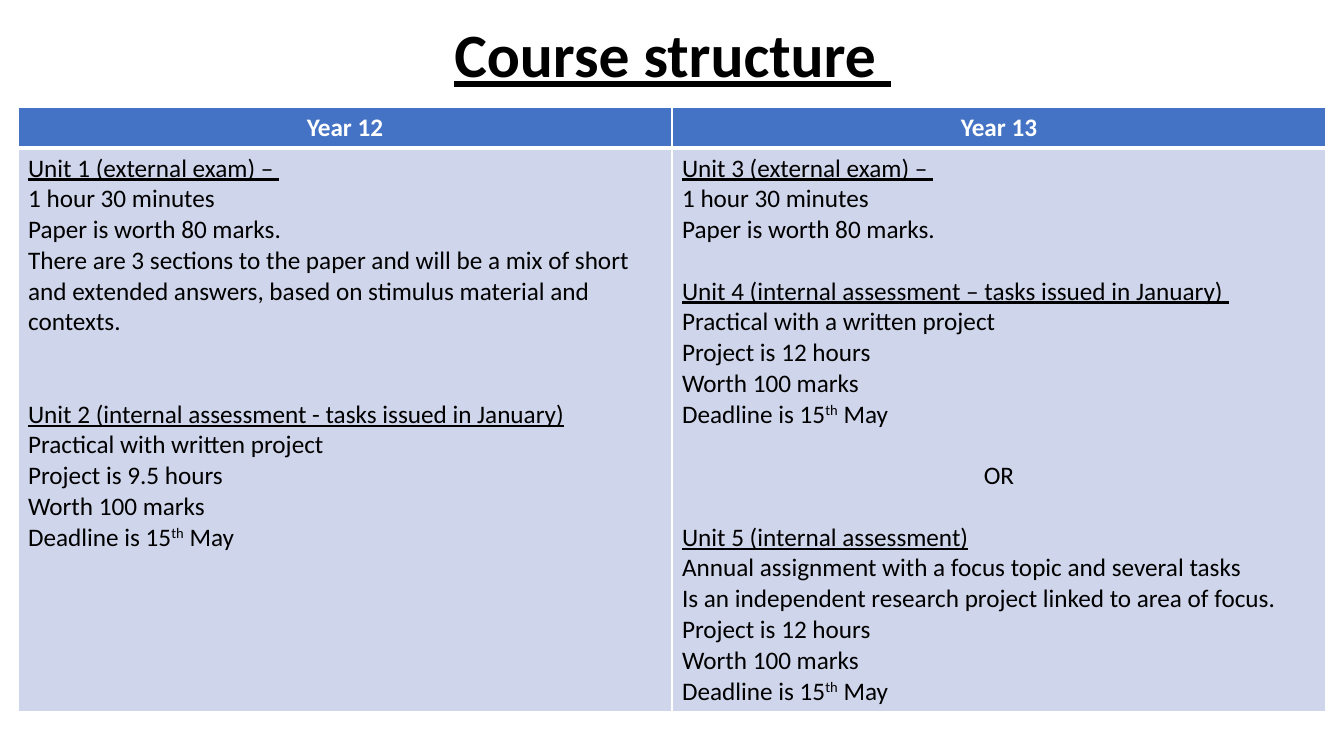
from lxml.etree import SubElement
from pptx import Presentation
from pptx.dml.color import RGBColor
from pptx.enum.text import MSO_ANCHOR, PP_ALIGN
from pptx.oxml.ns import qn
from pptx.util import Pt

TITLE = "Course structure "
EXAM = ["1 hour 30 minutes", "Paper is worth 80 marks."]
MARKS = ["Worth 100 marks", "Deadline is 15^th^ May"]  # ^ encloses superscript

# Year -> blocks of (blank lines above, underlined heading, lines, alignment)
YEARS = {
    "Year 12": [
        (0, "Unit 1 (external exam) – ", EXAM + [
            "There are 3 sections to the paper and will be a mix of short and "
            "extended answers, based on stimulus material and contexts."], PP_ALIGN.LEFT),
        (2, "Unit 2 (internal assessment - tasks issued in January)", [
            "Practical with written project", "Project is 9.5 hours"] + MARKS, PP_ALIGN.LEFT),
    ],
    "Year 13": [
        (0, "Unit 3 (external exam) – ", EXAM, PP_ALIGN.LEFT),
        (1, "Unit 4 (internal assessment – tasks issued in January) ", [
            "Practical with a written project", "Project is 12 hours"] + MARKS, PP_ALIGN.LEFT),
        (1, None, ["OR"], PP_ALIGN.CENTER),
        (1, "Unit 5 (internal assessment)", [
            "Annual assignment with a focus topic and several tasks",
            "Is an independent research project linked to area of focus.",
            "Project is 12 hours"] + MARKS, PP_ALIGN.LEFT),
    ],
}

THEME = {
    "font": "Calibri", "title": 44, "body": 18, "line": 22,
    "ink": "000000", "white": "FFFFFF", "header": "4472C4", "cell": "CFD5EA",
    "rule": 1, "header_rule": 3,
}

EMU_PER_PX = 914400 / 100.8
SLIDE = (1344, 756)
TITLE_BOX = (93, 19, 1159, 78)
TABLE_LEFT, TABLE_TOP = 18, 107
COL_WIDTH = 654
ROW_HEIGHTS = (41, 564)


def px(n):
    return round(n * EMU_PER_PX)


def add_run(p, text, size, color, superscript=False, **formats):
    r = p.add_run()
    r.text = text
    for name, value in {"name": THEME["font"], "size": Pt(size), **formats}.items():
        setattr(r.font, name, value)
    r.font.color.rgb = RGBColor.from_string(THEME[color])
    if superscript:
        r._r.get_or_add_rPr().set("baseline", "30000")


def style_cell(cell, fill, bottom):
    """Draw white borders, then fill the cell."""
    tc_pr = cell._tc.get_or_add_tcPr()
    widths = {"L": THEME["rule"], "R": THEME["rule"], "T": THEME["rule"], "B": bottom}
    for side, width in widths.items():
        ln = SubElement(tc_pr, qn(f"a:ln{side}"), w=str(Pt(width)))
        solid = SubElement(ln, qn("a:solidFill"))
        SubElement(solid, qn("a:srgbClr"), val=THEME["white"])
    cell.fill.solid()
    cell.fill.fore_color.rgb = RGBColor.from_string(THEME[fill])


def write_blocks(tf, blocks):
    p = tf.paragraphs[0]
    for b, (gap, heading, lines, align) in enumerate(blocks):
        texts = ([heading] if heading else []) + lines
        for i, text in enumerate(texts):
            if b or i:
                p = tf.add_paragraph()
            p.alignment = align
            if gap and i == 0:
                p.space_before = Pt(gap * THEME["line"])
            for part, piece in enumerate(text.split("^")):
                add_run(p, piece, THEME["body"], "ink", superscript=part % 2 == 1,
                        bold=False, underline=text == heading)


def add_title(s):
    tf = s.shapes.add_textbox(*map(px, TITLE_BOX)).text_frame
    tf.word_wrap = True
    tf.vertical_anchor = MSO_ANCHOR.MIDDLE
    p = tf.paragraphs[0]
    p.alignment, p.line_spacing = PP_ALIGN.CENTER, 0.9
    add_run(p, TITLE, THEME["title"], "ink", bold=True, underline=True)


def add_years(s):
    box = (TABLE_LEFT, TABLE_TOP, COL_WIDTH * len(YEARS), sum(ROW_HEIGHTS))
    table = s.shapes.add_table(len(ROW_HEIGHTS), len(YEARS), *map(px, box)).table
    for row, height in zip(table.rows, ROW_HEIGHTS):
        row.height = px(height)
    for c, (year, blocks) in enumerate(YEARS.items()):
        table.columns[c].width = px(COL_WIDTH)
        head, body = table.cell(0, c), table.cell(1, c)
        style_cell(head, "header", THEME["header_rule"])
        style_cell(body, "cell", THEME["rule"])
        # The shared edge takes the header's heavier rule
        body._tc.tcPr.find(qn("a:lnT")).set("w", str(Pt(THEME["header_rule"])))
        p = head.text_frame.paragraphs[0]
        p.alignment = PP_ALIGN.CENTER
        add_run(p, year, THEME["body"], "white", bold=True)
        write_blocks(body.text_frame, blocks)


def main():
    prs = Presentation()
    prs.slide_width, prs.slide_height = map(px, SLIDE)
    s = prs.slides.add_slide(prs.slide_layouts[6])
    add_title(s)
    add_years(s)
    prs.save("out.pptx")


if __name__ == "__main__":
    main()
